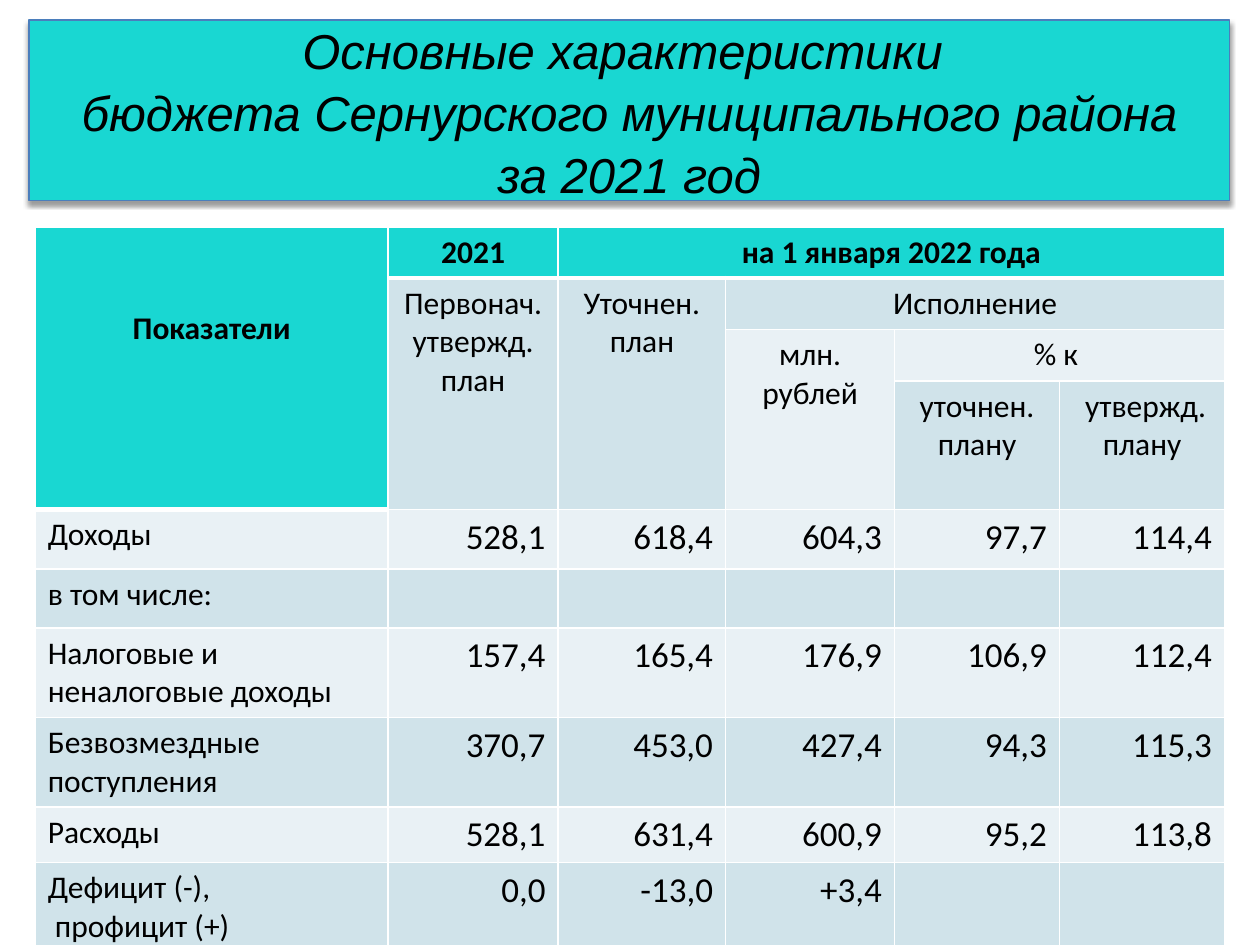
from lxml import etree
from pptx import Presentation
from pptx import util as u
from pptx.dml.color import RGBColor
from pptx.enum import text
from pptx.oxml import parse_xml
from pptx.oxml.ns import nsdecls, qn

COLORS = {
    "header": "19D7D2",
    "dark_band": "D0E3EA",
    "light_band": "E9F1F5",
    "border": "FFFFFF",
    "outline": "4B7EBC",
    "text": "000000",
}
Align = text.PP_ALIGN


def write_lines(frame, content, font, size, align, bold=False, italic=False):
    for index, line in enumerate(content.split("\n")):
        para = frame.paragraphs[0] if index == 0 else frame.add_paragraph()
        para.alignment = align
        span = para.add_run()
        span.text = line
        span.font.name = font
        span.font.size = u.Pt(size)
        span.font.bold = bold
        span.font.italic = italic
        span.font.color.rgb = RGBColor.from_string(COLORS["text"])


def add_border(cell, side, width):
    line = etree.SubElement(cell._tc.get_or_add_tcPr(), qn(f"a:ln{side}"), w=str(u.Pt(width)))
    fill = etree.SubElement(line, qn("a:solidFill"))
    etree.SubElement(fill, qn("a:srgbClr"), val=COLORS["border"])


deck = Presentation()
deck.slide_width, deck.slide_height = u.Inches(10), u.Inches(7.5)
page = deck.slides.add_slide(deck.slide_layouts[5])

title = page.shapes.title
title.left, title.top = u.Inches(0.23), u.Inches(0.16)
title.width, title.height = u.Inches(9.53), u.Inches(1.43)
title.fill.solid()
title.fill.fore_color.rgb = RGBColor.from_string(COLORS["header"])
title.line.color.rgb = RGBColor.from_string(COLORS["outline"])
title.line.width = u.Pt(0.75)
title._element.spPr.append(parse_xml(
    f'<a:effectLst {nsdecls("a")}><a:outerShdw blurRad="{u.Pt(3.1)}" dist="{u.Pt(1.6)}" '
    f'dir="5400000" rotWithShape="0"><a:srgbClr val="{COLORS["text"]}">'
    '<a:alpha val="38000"/></a:srgbClr></a:outerShdw></a:effectLst>'
))
frame = title.text_frame
frame.auto_size = text.MSO_AUTO_SIZE.NONE
frame.word_wrap = False
frame.vertical_anchor = text.MSO_ANCHOR.MIDDLE
write_lines(
    frame,
    "Основные характеристики \nбюджета Сернурского муниципального района\nза 2021 год",
    "Arial", 28, Align.CENTER, italic=True,
)
for para in frame.paragraphs:
    para.line_spacing = 1.05

HEADER_ROWS = 4
rows = [
    ["Показатели", "2021", "на 1 января 2022 года", "", "", ""],
    ["", "Первонач. утвержд. план", "Уточнен.\nплан", "Исполнение", "", ""],
    ["", "", "", "млн. рублей", "% к ", ""],
    ["", "", "", "", "уточнен. плану", " утвержд. плану"],
    ["Доходы", "528,1", "618,4", "604,3", "97,7", "114,4"],
    ["в том числе:", "", "", "", "", ""],
    ["Налоговые и неналоговые доходы", "157,4", "165,4", "176,9", "106,9", "112,4"],
    ["Безвозмездные поступления", "370,7", "453,0", "427,4", "94,3", "115,3"],
    ["Расходы", "528,1", "631,4", "600,9", "95,2", "113,8"],
    ["Дефицит (-),\n профицит (+)", "0,0", "-13,0", "+3,4", "", ""],
]
widths = [2.8, 1.35, 1.33, 1.34, 1.31, 1.31]
heights = [0.4, 0.41, 0.41, 1.02, 0.47, 0.47, 0.71, 0.71, 0.44, 0.71]
merges = [
    ((0, 0), (3, 0)), ((0, 2), (0, 5)), ((1, 1), (3, 1)), ((1, 2), (3, 2)),
    ((1, 3), (1, 5)), ((2, 3), (3, 3)), ((2, 4), (2, 5)),
]

table = page.shapes.add_table(
    len(rows), len(widths), u.Inches(0.28), u.Inches(1.8),
    u.Inches(sum(widths)), u.Inches(sum(heights)),
).table
table.horz_banding = False
for column, width in zip(table.columns, widths):
    column.width = u.Inches(width)
for row, height in zip(table.rows, heights):
    row.height = u.Inches(height)
for start, end in merges:
    table.cell(*start).merge(table.cell(*end))

for r, values in enumerate(rows):
    for c, value in enumerate(values):
        cell = table.cell(r, c)
        in_head = r < HEADER_ROWS
        is_header = r == 0 or (in_head and c == 0)
        for side in "LRTB":
            heavy = side == "B" and is_header
            add_border(cell, side, 3 if heavy else 1)
        band = "header" if is_header else "dark_band" if r % 2 else "light_band"
        cell.fill.solid()
        cell.fill.fore_color.rgb = RGBColor.from_string(COLORS[band])
        if value:
            align = Align.CENTER if in_head else Align.RIGHT if c else Align.LEFT
            size = 20 if c and not in_head else 18
            write_lines(cell.text_frame, value, "Calibri", size, align, bold=is_header)
table.cell(0, 0).margin_top = u.Inches(0.66)

deck.save("out.pptx")
